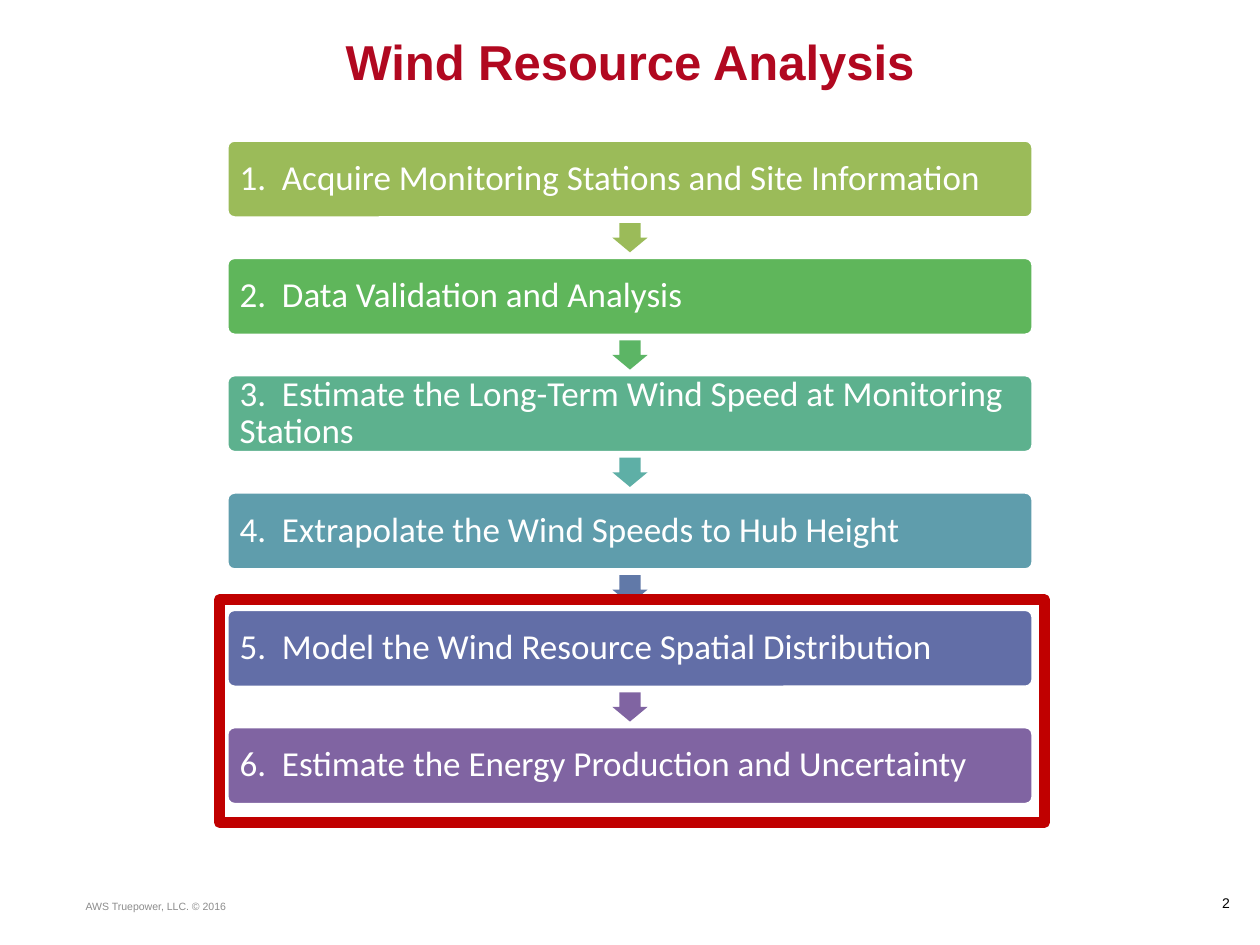
from pptx import Presentation
from pptx.dml.color import RGBColor
from pptx.enum import shapes, text
from pptx.util import Pt

HUES = {
    "title": "B10820", "frame": "C00000", "white": "FFFFFF",
    "foot": "8C8C8C", "page": "000000",
}
STEPS = [
    ("Acquire Monitoring Stations and Site Information", "9BBB59", "9BBB59"),
    ("Data Validation and Analysis", "5FB65B", "5CB565"),
    ("Estimate the Long-Term Wind Speed at Monitoring Stations", "5DB18E", "5EAFA6"),
    ("Extrapolate the Wind Speeds to Hub Height", "5F9DAC", "6179A8"),
    ("Model the Wind Resource Spatial Distribution", "626EA7", "8064A2"),
    ("Estimate the Energy Production and Uncertainty", "8064A2", None),
]


def write(frame, words, face, size, hue, align, bold=False):
    frame.word_wrap = True
    para = frame.paragraphs[0]
    para.text = words
    para.alignment = align
    font = para.font
    font.name, font.size, font.bold = face, Pt(size), bold
    font.color.rgb = RGBColor.from_string(hue)
    return para


def add_part(slide, kind, box, fill=None, line=None, width=0):
    part = slide.shapes.add_shape(kind, *map(Pt, box))
    part.shadow.inherit = False
    if fill:
        part.fill.solid()
        part.fill.fore_color.rgb = RGBColor.from_string(fill)
    else:
        part.fill.background()
    if line:
        part.line.color.rgb = RGBColor.from_string(line)
        part.line.width = Pt(width)
    else:
        part.line.fill.background()
    return part


def add_title(slide, box, words):
    title = slide.shapes.title
    title.left, title.top, title.width, title.height = map(Pt, box)
    frame = title.text_frame
    frame.auto_size = text.MSO_AUTO_SIZE.NONE
    frame.vertical_anchor = text.MSO_ANCHOR.TOP
    frame.margin_top = Pt(6)
    write(frame, words, "Arial", 28, HUES["title"], text.PP_ALIGN.CENTER, True)


def add_step(slide, box, words, fill):
    step = add_part(slide, shapes.MSO_SHAPE.ROUNDED_RECTANGLE, box,
                    fill, HUES["white"], 2)
    step.adjustments[0] = 0.1
    frame = step.text_frame
    frame.margin_left = frame.margin_right = Pt(6)
    frame.margin_top = frame.margin_bottom = 0
    frame.vertical_anchor = text.MSO_ANCHOR.MIDDLE
    para = write(frame, words, "Calibri", 20, HUES["white"], text.PP_ALIGN.LEFT)
    para.line_spacing = 0.9


def add_flow(slide, box, high=44.6, wide=20.1, tall=16.7):
    left, top, width, height = box
    pitch = (height - high) / (len(STEPS) - 1)
    for row, (words, fill, tint) in enumerate(STEPS):
        y = top + row * pitch
        add_step(slide, (left, y, width, high), f"{row + 1}.  {words}", fill)
        if tint:
            gap = (pitch - high - tall) / 2
            spot = (left + (width - wide) / 2, y + high + gap, wide, tall)
            arrow = add_part(slide, shapes.MSO_SHAPE.DOWN_ARROW, spot, tint)
            arrow.adjustments[0] = 0.6
            arrow.adjustments[1] = 0.5


def add_note(slide, box, words, size, hue, align):
    frame = slide.shapes.add_textbox(*map(Pt, box)).text_frame
    frame.vertical_anchor = text.MSO_ANCHOR.MIDDLE
    write(frame, words, "Arial", size, hue, align)


def main():
    deck = Presentation()
    deck.slide_width, deck.slide_height = Pt(720), Pt(540)
    slide = deck.slides.add_slide(deck.slide_layouts[5])
    add_note(slide, (41.8, 503.3, 243.4, 28.8), "AWS Truepower, LLC. © 2016",
             6, HUES["foot"], text.PP_ALIGN.LEFT)
    add_note(slide, (547.9, 501.8, 162, 28.8), "2",
             8, HUES["page"], text.PP_ALIGN.RIGHT)
    add_title(slide, (0, 12.2, 720, 57.6), "Wind Resource Analysis")
    add_flow(slide, (129.6, 80, 460.8, 379.8))
    add_part(slide, shapes.MSO_SHAPE.RECTANGLE, (125.3, 342.7, 471.6, 127.4),
             line=HUES["frame"], width=6)
    deck.save("out.pptx")


if __name__ == "__main__":
    main()
